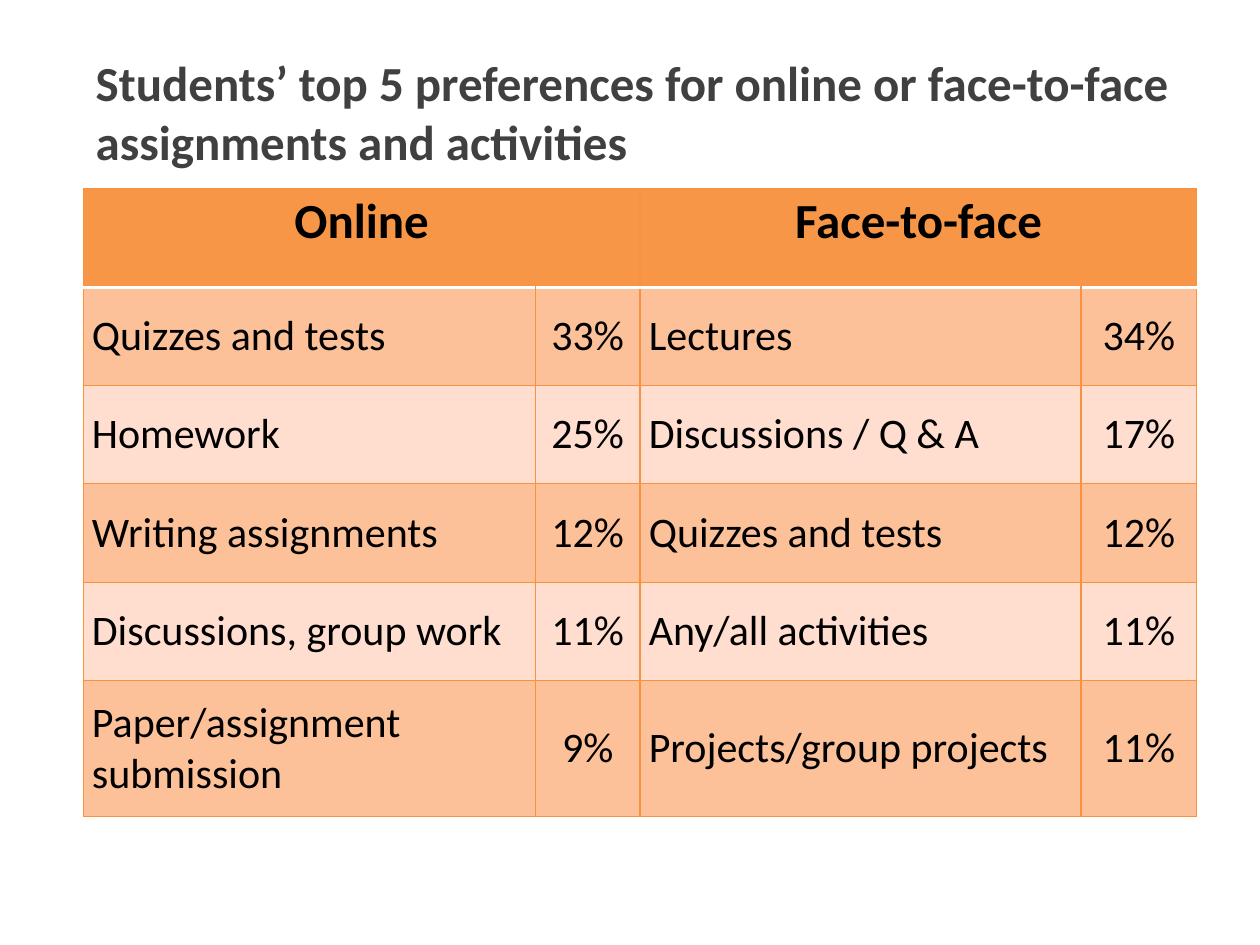
from lxml import etree
from pptx import Presentation
from pptx.dml.color import RGBColor
from pptx.enum.text import MSO_ANCHOR, MSO_AUTO_SIZE, PP_ALIGN
from pptx.oxml.ns import qn
from pptx.util import Inches, Pt

TOP, MIDDLE = MSO_ANCHOR.TOP, MSO_ANCHOR.MIDDLE
LEFT, CENTER = PP_ALIGN.LEFT, PP_ALIGN.CENTER
TITLE_ONLY = 5
FONT = "Calibri"
COLORS = {
    "title": "404040",
    "text": "000000",
    "header": "F79646",
    "dark_band": "FCC199",
    "light_band": "FFDED0",
    "border": "F69240",
    "header_rule": "FFFFFF",
}
COLUMN_WIDTHS = [3.59, 0.83, 3.5, 0.92]
ROW_HEIGHTS = [0.78] * 5 + [1.08]
HEADERS = ["Online", "Face-to-face"]
PREFERENCES = [
    ("Quizzes and tests", "33%", "Lectures", "34%"),
    ("Homework", "25%", "Discussions / Q & A", "17%"),
    ("Writing assignments", "12%", "Quizzes and tests", "12%"),
    ("Discussions, group work", "11%", "Any/all activities", "11%"),
    ("Paper/assignment submission", "9%", "Projects/group projects", "11%"),
]


def set_font(paragraph, size, color, bold):
    font = paragraph.font
    font.name, font.size, font.bold = FONT, Pt(size), bold
    font.color.rgb = RGBColor.from_string(COLORS[color])


def add_border(cell, side, color, width):
    """Draw one side of a cell; call in the order L, R, T, B, before the fill."""
    line = etree.SubElement(cell._tc.get_or_add_tcPr(), qn(f"a:ln{side}"), w=str(Pt(width)))
    solid = etree.SubElement(line, qn("a:solidFill"))
    etree.SubElement(solid, qn("a:srgbClr"), val=COLORS[color])


prs = Presentation()
prs.slide_width, prs.slide_height = Inches(10), Inches(7.5)
slide = prs.slides.add_slide(prs.slide_layouts[TITLE_ONLY])

title = slide.shapes.title
title.left, title.top = Inches(0.66), Inches(0.37)
title.width, title.height = Inches(8.77), Inches(0.8)
heading = title.text_frame
heading.text = "Students’ top 5 preferences for online or face-to-face assignments and activities"
heading.word_wrap = True
heading.auto_size = MSO_AUTO_SIZE.NONE
heading.vertical_anchor = TOP
heading.paragraphs[0].alignment = LEFT
set_font(heading.paragraphs[0], 28, "title", True)

table = slide.shapes.add_table(
    len(ROW_HEIGHTS), len(COLUMN_WIDTHS),
    Inches(0.66), Inches(1.5), Inches(sum(COLUMN_WIDTHS)), Inches(sum(ROW_HEIGHTS)),
).table
for column, width in zip(table.columns, COLUMN_WIDTHS):
    column.width = Inches(width)
for row, height in zip(table.rows, ROW_HEIGHTS):
    row.height = Inches(height)

# Each header spans a name column and its percentage column
for i, header in enumerate(HEADERS):
    table.cell(0, 2 * i).merge(table.cell(0, 2 * i + 1))
    table.cell(0, 2 * i).text = header
for r, preference in enumerate(PREFERENCES, start=1):
    for c, entry in enumerate(preference):
        table.cell(r, c).text = entry

for r, row in enumerate(table.rows):
    is_header = r == 0
    band = "header" if is_header else "dark_band" if r % 2 else "light_band"
    for c, cell in enumerate(row.cells):
        for side in "LRTB":
            if (is_header and side == "B") or (r == 1 and side == "T"):
                add_border(cell, side, "header_rule", 2)
            else:
                add_border(cell, side, "border", 0.75)
        cell.fill.solid()
        cell.fill.fore_color.rgb = RGBColor.from_string(COLORS[band])
        cell.vertical_anchor = MIDDLE
        cell.margin_left = cell.margin_right = Inches(0.07)
        cell.margin_top = cell.margin_bottom = Inches(0.07)
        paragraph = cell.text_frame.paragraphs[0]
        paragraph.alignment = CENTER if is_header or c % 2 else LEFT
        paragraph.space_after = Pt(6)
        if is_header:
            paragraph.line_spacing = Pt(15)
        set_font(paragraph, 28 if is_header else 24, "text", is_header)

prs.save("out.pptx")
